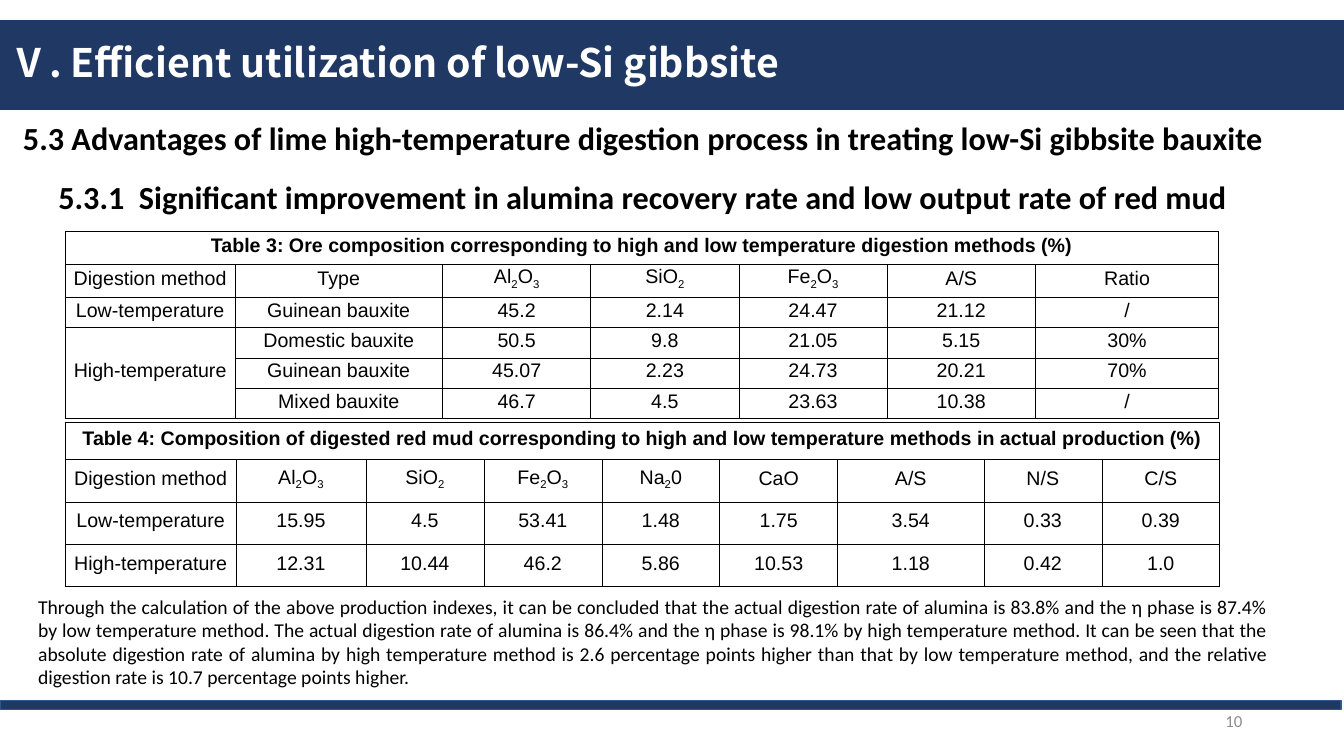
from lxml.etree import SubElement
from pptx import Presentation
from pptx.dml.color import RGBColor
from pptx.enum.shapes import MSO_SHAPE
from pptx.enum.text import MSO_ANCHOR, PP_ALIGN
from pptx.oxml import parse_xml
from pptx.oxml.ns import nsdecls, qn
from pptx.util import Inches, Pt

NAVY = RGBColor(0x20, 0x38, 0x64)
NAVY_EDGE = RGBColor(0x32, 0x54, 0x91)
WHITE = RGBColor(0xFF, 0xFF, 0xFF)
BLACK = RGBColor(0, 0, 0)
GRAY = RGBColor(0x8C, 0x8C, 0x8C)
TITLE_FONT = "Noto Sans CJK SC"

ORE_COLUMNS = [1.68, 2.06] + [1.47] * 4 + [1.82]
ORE_ROWS = [0.33, 0.33] + [0.3] * 4
ORE_TABLE = [
    ["Table 3: Ore composition corresponding to high and low temperature digestion methods (%)"],
    ["Digestion method", "Type", "Al_2O_3", "SiO_2", "Fe_2O_3", "A/S", "Ratio"],
    ["Low-temperature", "Guinean bauxite", "45.2", "2.14", "24.47", "21.12", "/"],
    ["High-temperature", "Domestic bauxite", "50.5", "9.8", "21.05", "5.15", "30%"],
    ["", "Guinean bauxite", "45.07", "2.23", "24.73", "20.21", "70%"],
    ["", "Mixed bauxite", "46.7", "4.5", "23.63", "10.38", "/"],
]
MUD_COLUMNS = [1.69, 1.29] + [1.17] * 4 + [1.45, 1.17, 1.17]
MUD_ROWS = [0.37] + [0.42] * 3
MUD_TABLE = [
    ["Table 4: Composition of digested red mud corresponding to high and low "
     "temperature methods in actual production (%)"],
    ["Digestion method", "Al_2O_3", "SiO_2", "Fe_2O_3", "Na_20", "CaO", "A/S", "N/S", "C/S"],
    ["Low-temperature", "15.95", "4.5", "53.41", "1.48", "1.75", "3.54", "0.33", "0.39"],
    ["High-temperature", "12.31", "10.44", "46.2", "5.86", "10.53", "1.18", "0.42", "1.0"],
]
CONCLUSION = (
    "Through the calculation of the above production indexes, it can be concluded that the "
    "actual digestion rate of alumina is 83.8% and the η phase is 87.4% by low temperature "
    "method. The actual digestion rate of alumina is 86.4% and the η phase is 98.1% by high "
    "temperature method. It can be seen that the absolute digestion rate of alumina by high "
    "temperature method is 2.6 percentage points higher than that by low temperature method, "
    "and the relative digestion rate is 10.7 percentage points higher."
)


def style(paragraph, size, color, bold=False, name="Calibri", align=PP_ALIGN.LEFT):
    paragraph.alignment = align
    font = paragraph.font
    font.size, font.bold, font.name = Pt(size), bold, name
    font.color.rgb = color


def add_bar(slide, box, edge=None):
    bar = slide.shapes.add_shape(MSO_SHAPE.RECTANGLE, *map(Inches, box))
    bar.shadow.inherit = False
    bar.fill.solid()
    bar.fill.fore_color.rgb = NAVY
    if edge is None:
        bar.line.fill.background()
    else:
        bar.line.color.rgb = edge
        bar.line.width = Pt(1)


def add_text(slide, box, text, size, color=BLACK, anchor=MSO_ANCHOR.TOP, **looks):
    frame = slide.shapes.add_textbox(*map(Inches, box)).text_frame
    frame.word_wrap = True
    frame.vertical_anchor = anchor
    paragraph = frame.paragraphs[0]
    paragraph.text = text
    style(paragraph, size, color, **looks)
    return paragraph


def add_title(slide, box):
    left, top, width, height = box
    add_bar(slide, box)
    title = add_text(slide, (left, top - 0.28, width - 1.83, height + 0.56),
                     "Ⅴ. Efficient utilization of low-Si gibbsite", 28, WHITE,
                     MSO_ANCHOR.MIDDLE, bold=True, name=TITLE_FONT)
    title.line_spacing = 0.9
    SubElement(title.runs[0].font._element, qn("a:ea"), typeface=TITLE_FONT)


def add_footer(slide, box):
    left, top, width, height = box
    add_bar(slide, box, NAVY_EDGE)
    add_text(slide, (left + 9.42, top, 3, 0.4), "10", 12, GRAY,
             MSO_ANCHOR.MIDDLE, align=PP_ALIGN.RIGHT)


def outline_cell(cell):
    cell.fill.background()
    for index, side in enumerate(("lnL", "lnR", "lnT", "lnB")):
        border = parse_xml(
            f'<a:{side} {nsdecls("a")} w="6350"><a:solidFill>'
            f'<a:srgbClr val="{BLACK}"/></a:solidFill></a:{side}>')
        cell._tc.get_or_add_tcPr().insert(index, border)


def write_formula(paragraph, formula):
    base, *parts = formula.split("_")
    paragraph.add_run().text = base
    for part in parts:
        subscript = paragraph.add_run()
        subscript.text = part[0]
        subscript.font._element.set("baseline", "-25000")
        if part[1:]:
            paragraph.add_run().text = part[1:]


def add_composition_table(slide, left, top, columns, heights, rows):
    table = slide.shapes.add_table(
        len(rows), len(columns), Inches(left), Inches(top),
        Inches(sum(columns)), Inches(sum(heights))).table
    table.first_row = table.horz_banding = False
    for column, width in zip(table.columns, columns):
        column.width = Inches(width)
    for row, height in zip(table.rows, heights):
        row.height = Inches(height)
    for cell in table.iter_cells():
        outline_cell(cell)
        cell.vertical_anchor = MSO_ANCHOR.MIDDLE
        cell.margin_left = cell.margin_right = cell.margin_top = Inches(0.01)
        cell.margin_bottom = Inches(0.05)
        style(cell.text_frame.paragraphs[0], 14, BLACK, name="Arial", align=PP_ALIGN.CENTER)
    for r, values in enumerate(rows):
        for c, value in enumerate(values):
            paragraph = table.cell(r, c).text_frame.paragraphs[0]
            if value:
                write_formula(paragraph, value)
            paragraph.font.bold = r == 0
    table.cell(0, 0).merge(table.cell(0, len(columns) - 1))
    return table


def build_slide(slide):
    add_footer(slide, (0, 6.95, 13.3, 0.09))
    add_title(slide, (0, 0.2, 13.33, 0.89))
    add_text(slide, (0.13, 1.12, 13.2, 0.5),
             "5.3 Advantages of lime high-temperature digestion process in treating "
             "low-Si gibbsite bauxite", 23, bold=True)
    add_text(slide, (0.48, 1.71, 12.4, 0.49),
             "5.3.1  Significant improvement in alumina recovery rate and low output "
             "rate of red mud", 23, bold=True)
    ore = add_composition_table(slide, 0.65, 2.29, ORE_COLUMNS, ORE_ROWS, ORE_TABLE)
    ore.cell(3, 0).merge(ore.cell(5, 0))
    add_composition_table(slide, 0.65, 4.19, MUD_COLUMNS, MUD_ROWS, MUD_TABLE)
    add_text(slide, (0.28, 5.85, 12.4, 1.04), CONCLUSION, 14, align=PP_ALIGN.JUSTIFY)


def main():
    deck = Presentation()
    deck.slide_width, deck.slide_height = Inches(13.33), Inches(7.5)
    build_slide(deck.slides.add_slide(deck.slide_layouts[6]))
    deck.save("out.pptx")


if __name__ == "__main__":
    main()
